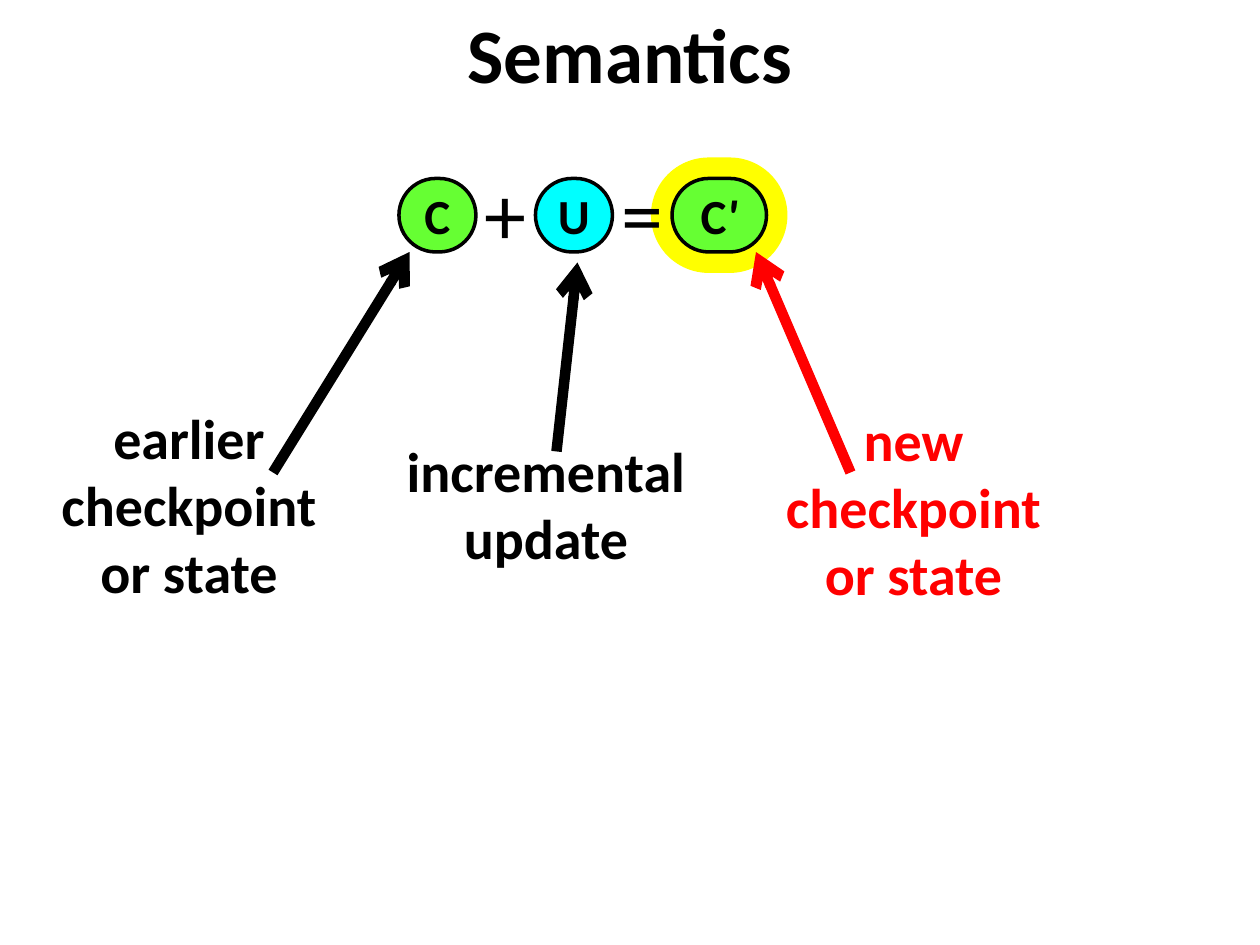
from pptx import Presentation
from pptx.dml.color import RGBColor
from pptx.enum.shapes import MSO_CONNECTOR as CONN, MSO_SHAPE as SHAPE
from pptx.enum.text import MSO_ANCHOR as ANCHOR, PP_ALIGN as ALIGN
from pptx.oxml.ns import qn
from pptx.util import Pt
from lxml.etree import SubElement

BLACK, RED, YELLOW, GREEN, CYAN = "000000", "FF0000", "FFFF00", "66FF33", "00FFFF"


def rgb(value):
    return RGBColor.from_string(value)


class Deck:
    font = "Calibri"

    def __init__(self, width, height):
        self.prs = Presentation()
        self.prs.slide_width, self.prs.slide_height = Pt(width), Pt(height)
        self.s = self.prs.slides.add_slide(self.prs.slide_layouts[6])

    def style(self, p, size, color=BLACK, bold=True, align=ALIGN.CENTER):
        p.alignment = align
        p.font.name, p.font.size, p.font.bold = self.font, Pt(size), bold
        p.font.color.rgb = rgb(color)

    def text(self, box, lines, size, **look):
        tf = self.s.shapes.add_textbox(*map(Pt, box)).text_frame
        tf.word_wrap = True
        tf.text = "\n".join(lines)
        for p in tf.paragraphs:
            self.style(p, size, **look)

    def pill(self, box, fill, outlined=True):
        sp = self.s.shapes.add_shape(SHAPE.ROUNDED_RECTANGLE, *map(Pt, box))
        sp.adjustments[0] = 0.5
        sp.shadow.inherit = False
        sp.fill.solid()
        sp.fill.fore_color.rgb = rgb(fill)
        if outlined:
            sp.line.color.rgb = rgb(BLACK)
            sp.line.width = Pt(2)
        else:
            sp.line.fill.background()
        return sp

    def term(self, box, fill, letter, prime=""):
        tf = self.pill(box, fill).text_frame
        tf.margin_left = tf.margin_right = 0
        tf.vertical_anchor = ANCHOR.MIDDLE
        p = tf.paragraphs[0]
        self.style(p, 28)
        p.add_run().text = letter
        if prime:
            r = p.add_run()
            r.text = prime
            r.font.italic = True

    def arrow(self, tip, tail, color):
        line = self.s.shapes.add_connector(CONN.STRAIGHT, *map(Pt, tip + tail))
        line.line.color.rgb = rgb(color)
        line.line.width = Pt(6)
        SubElement(line.line._get_or_add_ln(), qn("a:headEnd"), type="arrow")
        SubElement(line._element.spPr, qn("a:effectLst"))


def main():
    deck = Deck(720, 540)
    deck.pill((372, 90, 78, 66), YELLOW, outlined=False)
    deck.text((0, 0, 720, 90), ["Semantics"], 44)

    for x, width, fill, letter, prime in [
        (228, 44, GREEN, "C", ""),
        (306, 44, CYAN, "U", ""),
        (384, 54, GREEN, "C", "'"),
    ]:
        deck.term((x, 102, width, 42), fill, letter, prime)
    for x, sign in [(270, "+"), (348, "=")]:
        deck.text((x, 88.5, 39, 65.5), [sign], 48, bold=False, align=ALIGN.LEFT)

    for tip, tail, box, lines, color in [
        ((234, 144), (156, 270), (24, 227, 168, 124),
         ["earlier checkpoint", "or state"], BLACK),
        ((330, 150), (318, 258), (222, 246, 180, 85),
         ["incremental", "update"], BLACK),
        ((432, 144), (486, 270), (438, 228, 168, 124),
         ["new", "checkpoint", "or state"], RED),
    ]:
        deck.arrow(tip, tail, color)
        deck.text(box, lines, 32, color=color)

    deck.prs.save("out.pptx")


if __name__ == "__main__":
    main()
